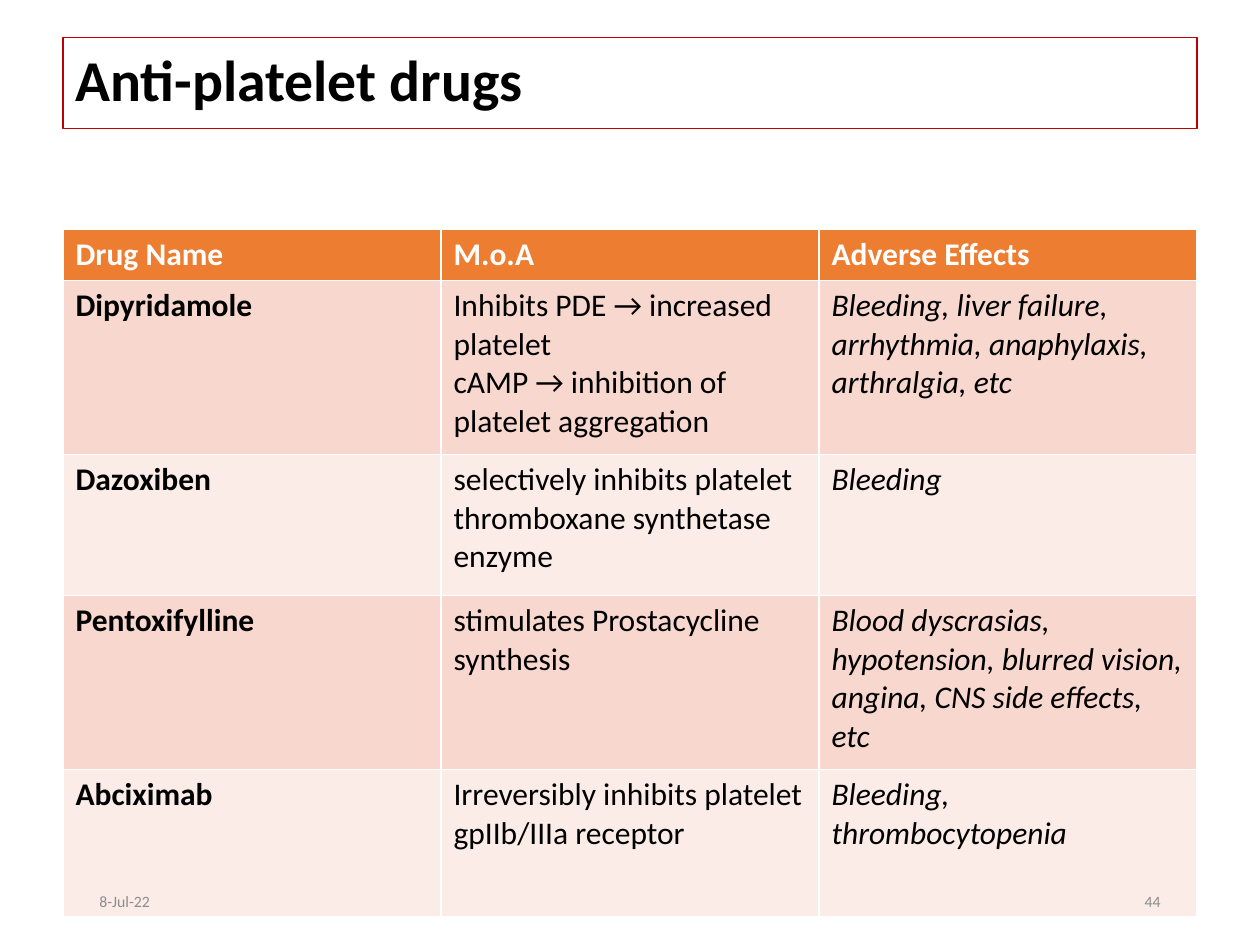
import pptx
import pptx.util
import pptx.dml.color
import pptx.enum.text

Inches = pptx.util.Inches
Pt = pptx.util.Pt
Align = pptx.enum.text.PP_ALIGN
Anchor = pptx.enum.text.MSO_ANCHOR
FONT = "Calibri"
HEAD = "ED7D31"
BANDS = ("F8D7CE", "FCECE8")
ROWS = [
    ("Drug Name", "M.o.A", "Adverse Effects"),
    ("Dipyridamole",
     "Inhibits PDE → increased platelet\ncAMP → inhibition of platelet aggregation",
     "Bleeding, liver failure, arrhythmia, anaphylaxis, arthralgia, etc"),
    ("Dazoxiben", "selectively inhibits platelet thromboxane synthetase enzyme", "Bleeding"),
    ("Pentoxifylline", "stimulates Prostacycline synthesis",
     "Blood dyscrasias, hypotension, blurred vision, angina, CNS side effects, etc"),
    ("Abciximab", "Irreversibly inhibits platelet gpIIb/IIIa receptor",
     "Bleeding, thrombocytopenia"),
]
HEIGHTS = (0.4, 1.38, 1.12, 1.38, 1.17)


def color(code):
    return pptx.dml.color.RGBColor.from_string(code)


def write(frame, text, size, code, bold=False, italic=False, align=Align.LEFT):
    frame.text = text
    for para in frame.paragraphs:
        para.alignment = align
        font = para.font
        font.name, font.size = FONT, Pt(size)
        font.bold, font.italic = bold, italic
        font.color.rgb = color(code)


def add_title(slide, box):
    title = slide.shapes.title
    title.left, title.top, title.width, title.height = map(Inches, box)
    title.line.color.rgb = color("C00000")
    title.line.width = Pt(0.75)
    frame = title.text_frame
    frame.auto_size = pptx.enum.text.MSO_AUTO_SIZE.NONE
    frame.vertical_anchor = Anchor.MIDDLE
    write(frame, "Anti-platelet drugs", 33, "000000", bold=True)
    frame.paragraphs[0].line_spacing = 0.9


def add_drugs(slide, box):
    shape = slide.shapes.add_table(len(ROWS), len(ROWS[0]), *map(Inches, box))
    table = shape.table
    for r, (texts, height) in enumerate(zip(ROWS, HEIGHTS)):
        table.rows[r].height = Inches(height)
        head = r == 0
        for c, text in enumerate(texts):
            cell = table.cell(r, c)
            cell.fill.solid()
            cell.fill.fore_color.rgb = color(HEAD if head else BANDS[(r - 1) % 2])
            write(cell.text_frame, text, 18, "FFFFFF" if head else "000000",
                  bold=head or c == 0, italic=not head and c == 2)


def add_note(slide, box, text, align):
    frame = slide.shapes.add_textbox(*map(Inches, box)).text_frame
    frame.word_wrap = True
    frame.vertical_anchor = Anchor.MIDDLE
    write(frame, text, 9, "8C8C8C", align=align)


def add_foot(slide, box):
    left, top, width, height = box
    part = width / 4
    add_note(slide, (left, top, part, height), "8-Jul-22", Align.LEFT)
    add_note(slide, (left + width - part, top, part, height), "44", Align.RIGHT)


def main():
    deck = pptx.Presentation()
    deck.slide_width, deck.slide_height = Inches(10), Inches(7.5)
    slide = deck.slides.add_slide(deck.slide_layouts[5])
    add_title(slide, (0.5, 0.3, 9, 0.72))
    add_drugs(slide, (0.5, 1.82, 9, sum(HEIGHTS)))
    add_foot(slide, (0.69, 6.95, 8.62, 0.4))
    deck.save("out.pptx")


if __name__ == "__main__":
    main()
